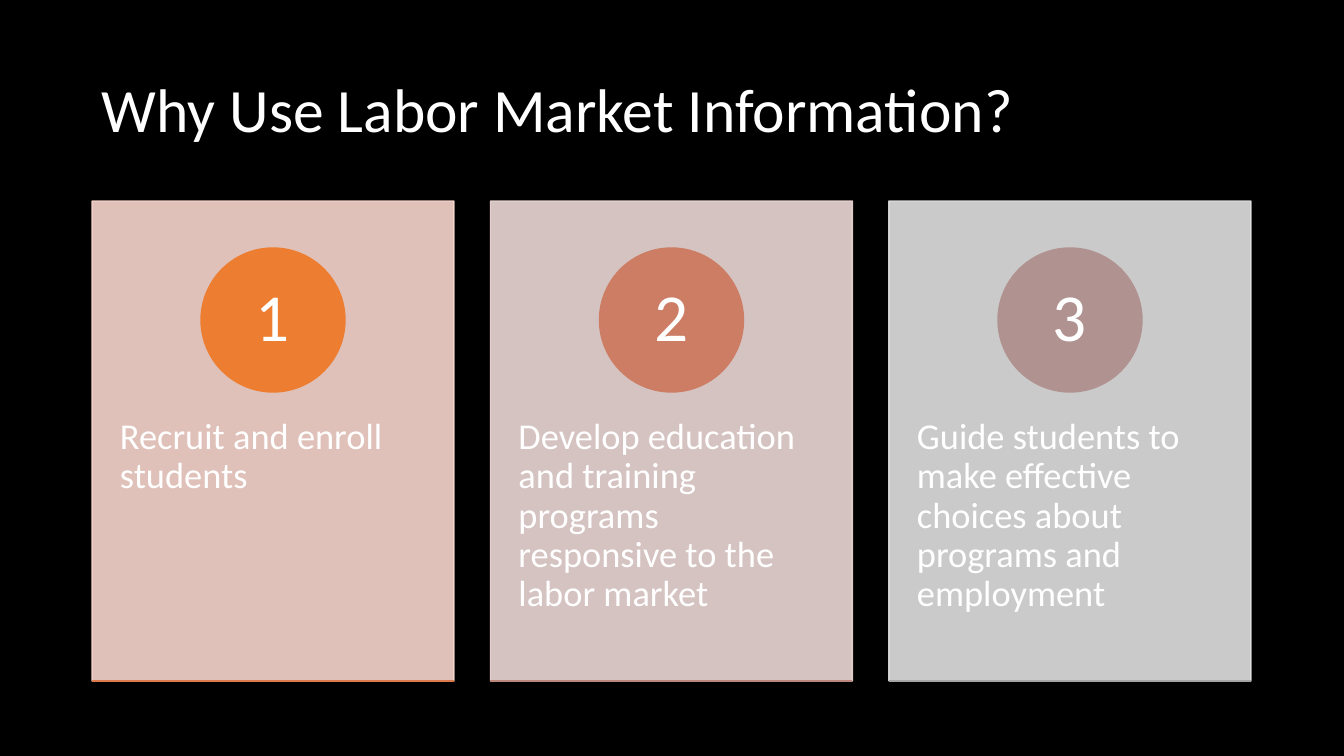
from lxml import etree
from pptx import Presentation
from pptx import util as u
from pptx.dml.color import RGBColor
from pptx.enum import shapes, text
from pptx.oxml.ns import qn

PX = 12192000 / 1344
BLACK = RGBColor(0x00, 0x00, 0x00)
WHITE = RGBColor(0xFF, 0xFF, 0xFF)
PEACH = RGBColor(0xF8, 0xD7, 0xCE)
ROSE = RGBColor(0xED, 0xD9, 0xD7)
SILVER = RGBColor(0xE1, 0xE1, 0xE1)
ORANGE = RGBColor(0xED, 0x7D, 0x31)
TERRACOTTA = RGBColor(0xCC, 0x7D, 0x64)
MAUVE = RGBColor(0xB0, 0x93, 0x91)
RUST = RGBColor(0xDC, 0x7A, 0x4B)
CLAY = RGBColor(0xBD, 0x86, 0x7B)
GREY = RGBColor(0xA5, 0xA5, 0xA5)

REASONS = [
    ("Recruit and enroll students", PEACH, ORANGE, RUST),
    ("Develop education and training programs responsive to the labor market",
     ROSE, TERRACOTTA, CLAY),
    ("Guide students to make effective choices about programs and employment",
     SILVER, MAUVE, GREY),
]


def emu(*lengths):
    return [u.Emu(round(n * PX)) for n in lengths]


def write(sp, words, size, align, anchor, margins):
    """Fill a shape with one white paragraph; margins are (side, top and bottom) px."""
    tf = sp.text_frame
    side, edge = emu(*margins)
    frame_format = {"word_wrap": True, "auto_size": text.MSO_AUTO_SIZE.NONE,
                    "vertical_anchor": anchor,
                    "margin_left": side, "margin_right": side,
                    "margin_top": edge, "margin_bottom": edge}
    for name, value in frame_format.items():
        setattr(tf, name, value)
    p = tf.paragraphs[0]
    p.alignment, p.line_spacing = align, 0.9
    r = p.add_run()
    r.text = words
    for name, value in {"name": "Calibri", "size": u.Pt(size)}.items():
        setattr(r.font, name, value)
    r.font.color.rgb = WHITE


def paint(sp, color, opacity=100):
    """Give a shape one colour for fill and line, without a shadow."""
    sp.shadow.inherit = False
    sp.fill.solid()
    sp.fill.fore_color.rgb = color
    sp.line.color.rgb = color
    sp.line.width = u.Pt(1)
    if opacity < 100:
        for clr in sp._element.spPr.iter(qn("a:srgbClr")):
            etree.SubElement(clr, qn("a:alpha"), val=str(opacity * 1000))


def add_title(s, x, y, w, h):
    sp = s.shapes.title
    sp.left, sp.top, sp.width, sp.height = emu(x, y, w, h)
    write(sp, "Why Use Labor Market Information?", 44, text.PP_ALIGN.LEFT,
          text.MSO_ANCHOR.MIDDLE, (10, 5))


def add_card(s, x, y, w, h, number, reason, panel, badge, rule):
    sp = s.shapes.add_shape(shapes.MSO_SHAPE.RECTANGLE, *emu(x, y, w, h))
    paint(sp, panel, 90)

    sp = s.shapes.add_textbox(*emu(x, y + 181, w, 288))
    write(sp, reason, 26, text.PP_ALIGN.LEFT, text.MSO_ANCHOR.TOP, (28, 36))

    size = 144
    sp = s.shapes.add_shape(shapes.MSO_SHAPE.OVAL,
                            *emu(x + (w - size) / 2, y + 47, size, size))
    paint(sp, badge)
    write(sp, str(number), 48, text.PP_ALIGN.CENTER, text.MSO_ANCHOR.MIDDLE, (11, 1))

    line = s.shapes.add_connector(shapes.MSO_CONNECTOR.STRAIGHT,
                                  *emu(x, y + h, x + w, y + h))
    line.line.color.rgb = rule
    line.line.width = u.Pt(1)
    etree.SubElement(line._element.spPr, qn("a:effectLst"))


def add_cards(s, x, y, w, h):
    """Spread the cards evenly over the width of the box."""
    card = 362
    pitch = (w - card) / (len(REASONS) - 1)
    for i, reason in enumerate(REASONS):
        add_card(s, x + i * pitch, y, card, h, i + 1, *reason)


def main():
    prs = Presentation()
    prs.slide_width, prs.slide_height = emu(1344, 756)
    s = prs.slides.add_slide(prs.slide_layouts[5])
    s.background.fill.solid()
    s.background.fill.fore_color.rgb = BLACK
    add_title(s, 92, 40, 1159, 146)
    add_cards(s, 92, 201, 1159, 480)
    prs.save("out.pptx")


if __name__ == "__main__":
    main()
